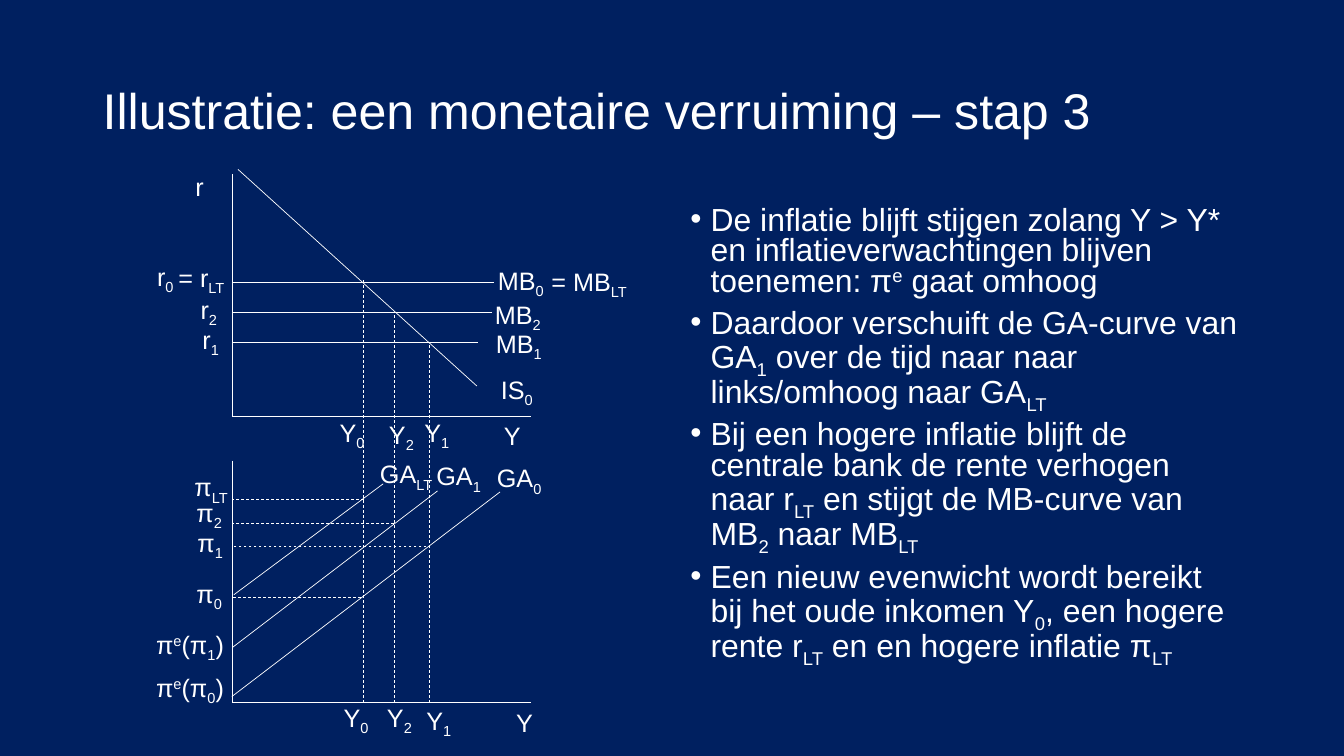
import pptx
import pptx.dml.color
import pptx.enum.dml
import pptx.enum.shapes
import pptx.enum.text
import pptx.util
from lxml import etree
from pptx.oxml.ns import qn

Inches = pptx.util.Inches
Pt = pptx.util.Pt


def color(hexa):
    return pptx.dml.color.RGBColor.from_string(hexa)


class Slide:
    font = "Arial"
    ink = "FFFFFF"
    back = "002060"
    shift = {"_": "-25000", "^": "30000"}

    def __init__(self, deck):
        self.slide = deck.slides.add_slide(deck.slide_layouts[6])
        fill = self.slide.background.fill
        fill.solid()
        fill.fore_color.rgb = color(self.back)

    def add_runs(self, par, text, size):
        """Add text whose parts, split by |, are lowered by _ or raised by ^."""
        for part in text.split("|"):
            run = par.add_run()
            run.text = part.lstrip("_^")
            run.font.name = self.font
            run.font.size = Pt(size)
            run.font.color.rgb = color(self.ink)
            if part[0] in self.shift:
                run.font._element.set("baseline", self.shift[part[0]])

    def box(self, left, top, width, height, wrap=True):
        shape = self.slide.shapes.add_textbox(
            Inches(left), Inches(top), Inches(width), Inches(height))
        shape.text_frame.word_wrap = wrap
        return shape.text_frame

    def title(self, text):
        frame = self.box(0.92, 0.4, 11.5, 1.45)
        frame.vertical_anchor = pptx.enum.text.MSO_ANCHOR.MIDDLE
        par = frame.paragraphs[0]
        par.line_spacing = 0.9
        self.add_runs(par, text, 35.8)

    def bullets(self, items):
        frame = self.box(6.75, 2, 5.67, 4.76)
        for i, item in enumerate(items):
            par = frame.add_paragraph() if i else frame.paragraphs[0]
            par.line_spacing = 0.8
            par.space_before = Pt(8.1)
            props = par._p.get_or_add_pPr()
            props.set("marL", str(Inches(0.2)))
            props.set("indent", str(-Inches(0.2)))
            etree.SubElement(props, qn("a:buFont")).set("typeface", self.font)
            etree.SubElement(props, qn("a:buChar")).set("char", "•")
            self.add_runs(par, item, 22.8)

    def label(self, text, left, top, width):
        frame = self.box(left, top, width, 0.4, wrap=False)
        self.add_runs(frame.paragraphs[0], text, 18)

    def line(self, x1, y1, x2, y2, dash=False):
        line = self.slide.shapes.add_connector(
            pptx.enum.shapes.MSO_CONNECTOR.STRAIGHT,
            Inches(x1), Inches(y1), Inches(x2), Inches(y2))
        line.line.color.rgb = color(self.ink)
        line.line.width = Pt(0.5)
        if dash:
            line.line.dash_style = pptx.enum.dml.MSO_LINE.DASH
        etree.SubElement(line._element.spPr, qn("a:effectLst"))


BULLETS = [
    "De inflatie blijft stijgen zolang Y > Y* en inflatieverwachtingen "
    "blijven toenemen: π|^e| gaat omhoog",
    "Daardoor verschuift de GA-curve van GA|_1| over de tijd naar naar "
    "links/omhoog naar GA|_LT",
    "Bij een hogere inflatie blijft de centrale bank de rente verhogen "
    "naar r|_LT| en stijgt de MB-curve van MB|_2| naar MB|_LT",
    "Een nieuw evenwicht wordt bereikt bij het oude inkomen Y|_0|, een "
    "hogere rente r|_LT| en en hogere inflatie π|_LT",
]

AXES = [
    (2.3, 1.73, 2.3, 4.13), (2.3, 4.13, 5.27, 4.13),
    (2.3, 4.57, 2.3, 6.97), (2.3, 6.97, 5.27, 6.97),
]
CURVES = [
    (2.36, 1.68, 4.73, 3.83),  # IS
    (2.3, 2.8, 4.9, 2.8), (2.3, 3.1, 4.88, 3.1), (2.3, 3.4, 4.74, 3.4),  # MB
    (2.3, 6.91, 4.96, 4.88), (2.31, 6.42, 4.34, 4.87),  # GA
    (2.32, 5.9, 3.8, 4.8),
]
# Income levels: x and the rate where the guide starts
INCOMES = [(3.6, 2.78), (3.91, 3.1), (4.26, 3.4)]
# Inflation levels: y and the income where the guide ends
PRICES = [(4.95, 3.61), (5.19, 3.91), (5.42, 4.23), (5.93, 3.58)]

# Text, left, top, width
LABELS = [
    ("r", 1.84, 1.65, 0.29),
    ("r|_0", 1.46, 2.54, 0.38), ("= r|_LT", 1.67, 2.55, 0.69),
    ("r|_2", 1.89, 2.87, 0.38), ("r|_1", 1.91, 3.17, 0.38),
    ("MB|_0", 4.84, 2.58, 0.67), ("= MB|_LT", 5.37, 2.59, 0.98),
    ("MB|_2", 4.81, 2.92, 0.67), ("MB|_1", 4.82, 3.21, 0.67),
    ("IS|_0", 4.87, 3.66, 0.53),
    ("Y|_0", 3.27, 4.09, 0.46), ("Y|_2", 3.76, 4.11, 0.46),
    ("Y|_1", 4.11, 4.09, 0.46), ("Y", 4.9, 4.12, 0.37),
    ("GA|_LT", 3.67, 4.5, 0.75), ("GA|_1", 4.23, 4.52, 0.66),
    ("GA|_0", 4.83, 4.54, 0.66),
    ("π|_LT", 1.83, 4.63, 0.59), ("π|_2", 1.85, 4.88, 0.47),
    ("π|_1", 1.86, 5.18, 0.48), ("π|_0", 1.85, 5.69, 0.47),
    ("π|^e|(π|_1|)", 1.45, 6.19, 0.9), ("π|^e|(π|_0|)", 1.45, 6.62, 0.9),
    ("Y|_0", 3.31, 6.92, 0.46), ("Y|_2", 3.74, 6.92, 0.46),
    ("Y|_1", 4.13, 6.95, 0.46), ("Y", 5.02, 6.97, 0.37),
]


def main():
    deck = pptx.Presentation()
    deck.slide_width = Inches(13.33)
    deck.slide_height = Inches(7.5)
    page = Slide(deck)
    page.title("Illustratie: een monetaire verruiming – stap 3")
    page.bullets(BULLETS)
    for ends in AXES + CURVES:
        page.line(*ends)
    for x, top in INCOMES:
        page.line(x, 6.97, x, top, dash=True)
    for y, right in PRICES:
        page.line(right, y, 2.3, y, dash=True)
    for label in LABELS:
        page.label(*label)
    deck.save("out.pptx")


if __name__ == "__main__":
    main()
